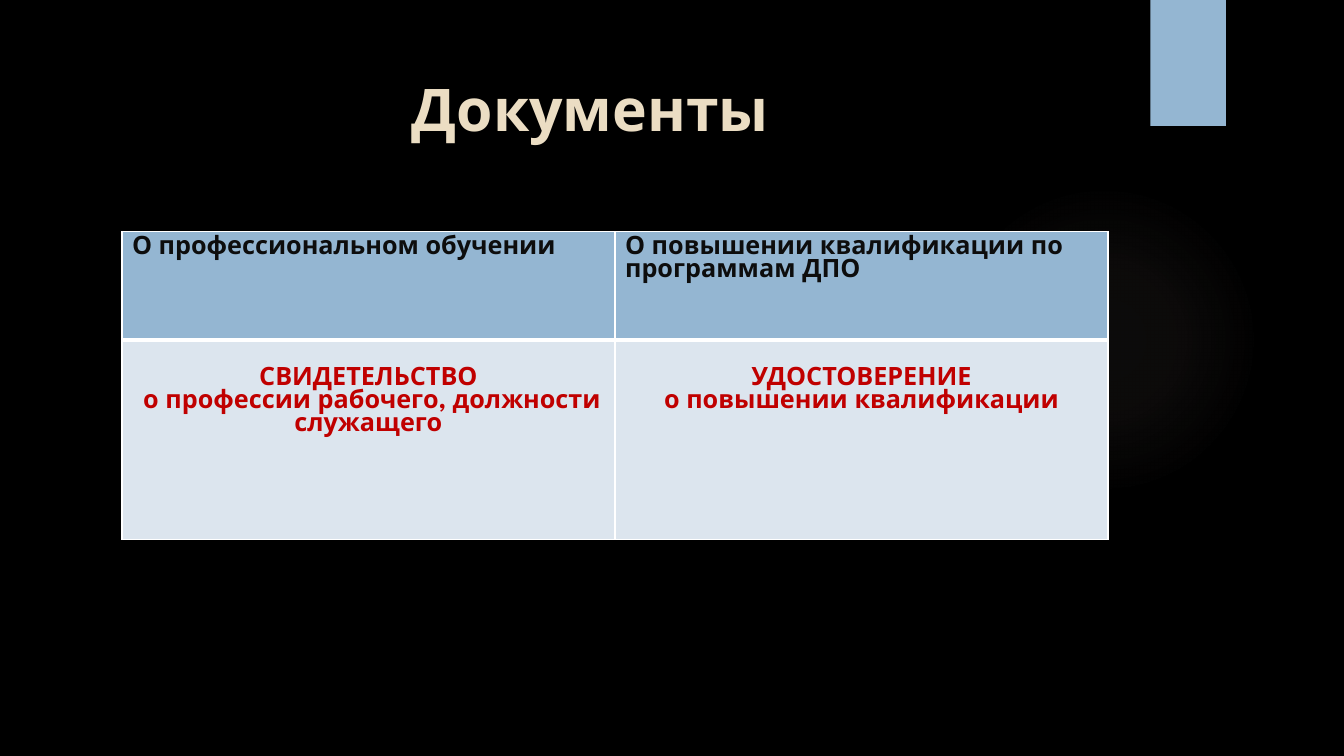
from typing import NamedTuple

from lxml.etree import SubElement as Sub
from pptx import Presentation
from pptx.dml.color import RGBColor as Rgb
from pptx.enum.shapes import MSO_SHAPE as Shape
from pptx.enum.text import MSO_ANCHOR as Anchor, PP_ALIGN as Align
from pptx.oxml.ns import qn
from pptx.util import Inches, Pt

FONT = "League Spartan"
HUES = {
    "black": "000000",
    "blue": "94B6D2",
    "pale": "DCE5EE",
    "sand": "EBDDC3",
    "ink": "0D0D0D",
    "red": "C00000",
    "white": "FFFFFF",
    "glow": "B39D94",
}


class Line(NamedTuple):
    text: str
    indent: float = 0


class Row(NamedTuple):
    height: float
    fill: str
    color: str
    align: Align
    inset: float
    edges: dict[str, int]
    cells: list[list[Line]]


ROWS = [
    Row(1.07, "blue", "ink", Align.LEFT, 0.05, {"L": 1, "R": 1, "T": 1, "B": 3}, [
        [Line("О профессиональном обучении")],
        [Line("О повышении квалификации по программам ДПО")],
    ]),
    Row(1.98, "pale", "red", Align.CENTER, 0.28, {"L": 1, "R": 1, "T": 3, "B": 1}, [
        [Line("СВИДЕТЕЛЬСТВО"), Line("о профессии рабочего, должности служащего", 0.07)],
        [Line("УДОСТОВЕРЕНИЕ"), Line("о повышении квалификации")],
    ]),
]


def hue(name: str) -> Rgb:
    return Rgb.from_string(HUES[name])


def write(frame, lines: list[Line], size: int, color: str, align: Align) -> None:
    frame.word_wrap = True
    for i, line in enumerate(lines):
        para = frame.paragraphs[0] if i == 0 else frame.add_paragraph()
        para.text = line.text
        para.alignment = align
        if line.indent:
            para._p.get_or_add_pPr().set("indent", str(Inches(line.indent)))
        font = para.font
        font.name, font.size, font.bold = FONT, Pt(size), True
        font.color.rgb = hue(color)


def edge(cell, side: str, width: int) -> None:
    line = Sub(cell._tc.get_or_add_tcPr(), qn(f"a:ln{side}"), w=str(Pt(width)))
    fill = Sub(line, qn("a:solidFill"))
    Sub(fill, qn("a:srgbClr"), val=HUES["white"])


def add_plain(slide, kind: Shape, *box: float):
    shape = slide.shapes.add_shape(kind, *map(Inches, box))
    shape.shadow.inherit = False
    shape.line.fill.background()
    return shape


def add_glow(slide) -> None:
    glow = add_plain(slide, Shape.OVAL, 9.41, 1.83, 3.08, 3.08)
    glow.fill.gradient()
    grad = glow._element.spPr.find(qn("a:gradFill"))
    for child in list(grad):
        grad.remove(child)
    stops = Sub(grad, qn("a:gsLst"))
    for place, alpha in ((0, 7), (36, 6), (69, 0)):
        stop = Sub(stops, qn("a:gs"), pos=str(place * 1000))
        color = Sub(stop, qn("a:srgbClr"), val=HUES["glow"])
        Sub(color, qn("a:alpha"), val=str(alpha * 1000))
    way = Sub(grad, qn("a:path"), path="circle")
    Sub(way, qn("a:fillToRect"), l="50000", t="50000", r="50000", b="50000")


def add_grid(slide) -> None:
    high = sum(row.height for row in ROWS)
    box = map(Inches, (1.21, 2.3, 9.78, high))
    table = slide.shapes.add_table(len(ROWS), 2, *box).table
    for r, row in enumerate(ROWS):
        table.rows[r].height = Inches(row.height)
        for c, lines in enumerate(row.cells):
            cell = table.cell(r, c)
            for side, width in row.edges.items():
                edge(cell, side, width)
            cell.fill.solid()
            cell.fill.fore_color.rgb = hue(row.fill)
            cell.margin_top = Inches(row.inset)
            write(cell.text_frame, lines, 18, row.color, row.align)


def main() -> None:
    deck = Presentation()
    deck.slide_width, deck.slide_height = Inches(13.33), Inches(7.5)
    slide = deck.slides.add_slide(deck.slide_layouts[6])
    slide.background.fill.solid()
    slide.background.fill.fore_color.rgb = hue("black")

    add_glow(slide)
    tab = add_plain(slide, Shape.RECTANGLE, 11.41, 0, 0.75, 1.25)
    tab.fill.solid()
    tab.fill.fore_color.rgb = hue("blue")

    title = slide.shapes.add_textbox(*map(Inches, (0.71, 0.5, 10.29, 1.53)))
    frame = title.text_frame
    frame.vertical_anchor = Anchor.TOP
    frame.margin_top = Inches(0.22)
    write(frame, [Line("Документы")], 42, "sand", Align.CENTER)

    add_grid(slide)
    deck.save("out.pptx")


if __name__ == "__main__":
    main()
